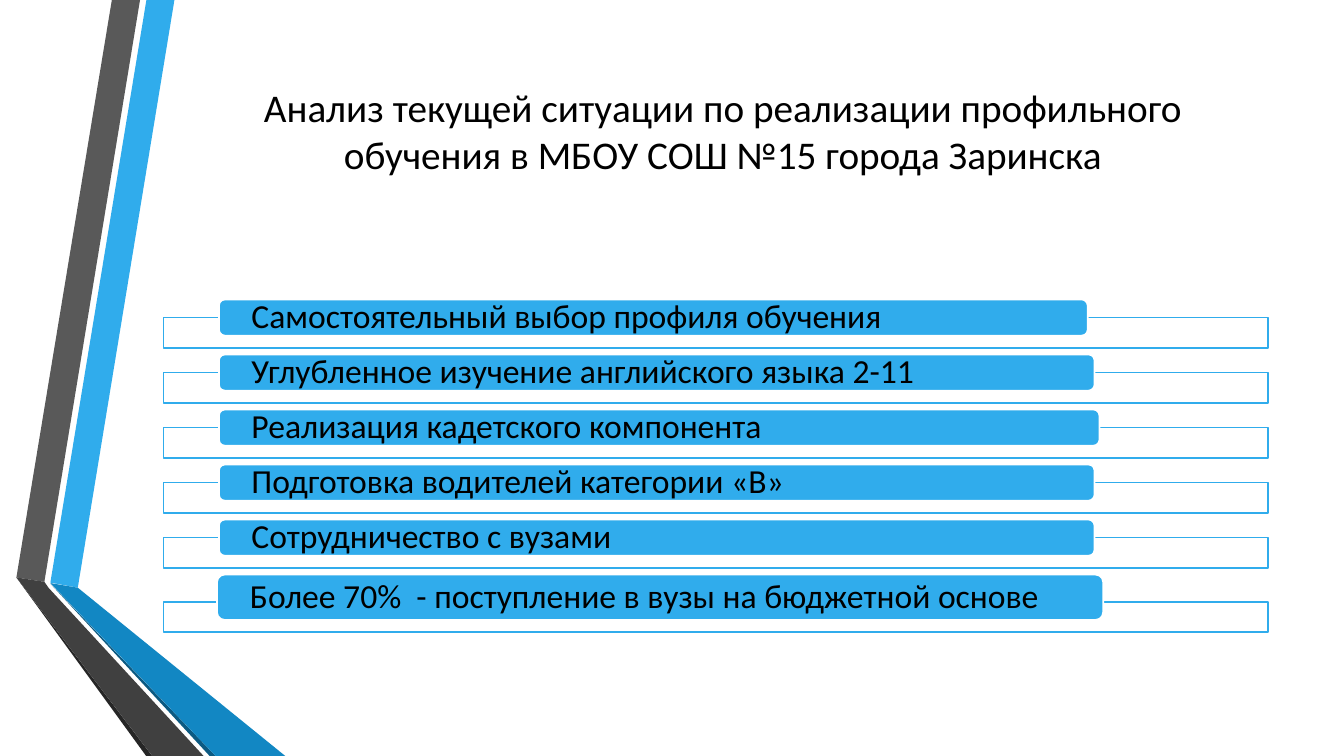
from pptx import Presentation
from pptx.dml.color import RGBColor
from pptx.enum.shapes import MSO_SHAPE as Preset
from pptx.enum.text import MSO_ANCHOR as Anchor, PP_ALIGN as Align
from pptx.oxml.ns import qn
from pptx.util import Pt
from lxml.etree import SubElement

BLUE, WHITE, BLACK = "30ACEC", "FFFFFF", "000000"
TITLE = ("Анализ текущей ситуации по реализации профильного "
         "обучения в МБОУ СОШ №15 города Заринска")

# Outline points and colour of each ribbon piece
RIBBONS = [
    ("30ACEC", [(36, 416.2), (55.6, 419.8), (124.6, 0), (104.6, 0)]),
    ("595959", [(100, 0), (79.9, 0), (11.7, 412.5), (31.7, 415.6)]),
    ("262626", [(11.7, 412.5), (104.4, 540), (108.7, 540)]),
    ("0C5A82", [(36, 416.9), (149.8, 540), (154.1, 540)]),
    ("1287C3", [(36, 416.5), (154.1, 540), (203.8, 540), (55.6, 419.8)]),
    ("404040", [(145.4, 540), (34.6, 419.8), (31.7, 415.6),
                (11.7, 412.5), (108.7, 540)]),
]

# Text, left, width and height of each bar
BARS = [
    ("Самостоятельный выбор профиля обучения", 156.4, 620.6, 25.9),
    ("Углубленное изучение английского языка 2-11", 156.4, 625.5, 25.9),
    ("Реализация кадетского компонента", 156.4, 629, 25.9),
    ("Подготовка водителей категории «В»", 156.4, 625.5, 25.9),
    ("Сотрудничество с вузами", 156.4, 625.5, 25.9),
    ("Более 70%  - поступление в вузы на бюджетной основе", 155, 633, 32.4),
]
FIRST_TOP, PITCH = 213.9, 39.3
FRAME_LEFT, FRAME_WIDTH, FRAME_HEIGHT, OVERLAP = 116.8, 789, 21.7, 13


def color(value):
    return RGBColor.from_string(value)


def paint(shape, fill, line=None):
    shape.shadow.inherit = False
    shape.fill.solid()
    shape.fill.fore_color.rgb = color(fill)
    if line:
        shape.line.color.rgb = color(line)
        shape.line.width = Pt(1.25)
    else:
        shape.line.fill.background()


def set_opacity(shape, percent):
    tint = shape._element.spPr.find(qn("a:solidFill"))[0]
    SubElement(tint, qn("a:alpha"), val=str(percent * 1000))


def write(shape, text, size, align):
    frame = shape.text_frame
    frame.text = text
    frame.word_wrap = True
    frame.vertical_anchor = Anchor.MIDDLE
    para = frame.paragraphs[0]
    para.alignment = align
    font = para.runs[0].font
    font.name, font.size = "Calibri", Pt(size)
    font.color.rgb = color(BLACK)
    return frame


def add_ribbon(page, fill, points):
    start, *rest = [(Pt(x), Pt(y)) for x, y in points]
    builder = page.shapes.build_freeform(*start)
    builder.add_line_segments(rest, close=True)
    paint(builder.convert_to_shape(), fill)


def add_box(page, preset, left, top, width, height, fill, line):
    box = page.shapes.add_shape(preset, Pt(left), Pt(top), Pt(width), Pt(height))
    paint(box, fill, line)
    return box


def add_bar(page, top, text, left, width, height):
    """Add an outlined frame with a rounded text bar over its upper edge."""
    frame_box = add_box(page, Preset.RECTANGLE, FRAME_LEFT, top + height - OVERLAP,
                        FRAME_WIDTH, FRAME_HEIGHT, WHITE, BLUE)
    set_opacity(frame_box, 90)
    bar = add_box(page, Preset.ROUNDED_RECTANGLE, left, top, width, height, BLUE, WHITE)
    frame = write(bar, text, 24, Align.LEFT)
    frame.margin_left = frame.margin_right = Pt(22)
    frame.margin_top = frame.margin_bottom = 0
    frame.paragraphs[0].line_spacing = 0.9


def place_title(page):
    title = page.shapes.title
    title.left, title.top = Pt(126.7), Pt(54)
    title.width, title.height = Pt(779), Pt(78.5)
    write(title, TITLE, 28, Align.CENTER)


def main():
    deck = Presentation()
    deck.slide_width, deck.slide_height = Pt(960), Pt(540)
    page = deck.slides.add_slide(deck.slide_layouts[5])
    for fill, points in RIBBONS:
        add_ribbon(page, fill, points)
    place_title(page)
    for row, bar in enumerate(BARS):
        add_bar(page, FIRST_TOP + row * PITCH, *bar)
    deck.save("out.pptx")


if __name__ == "__main__":
    main()
